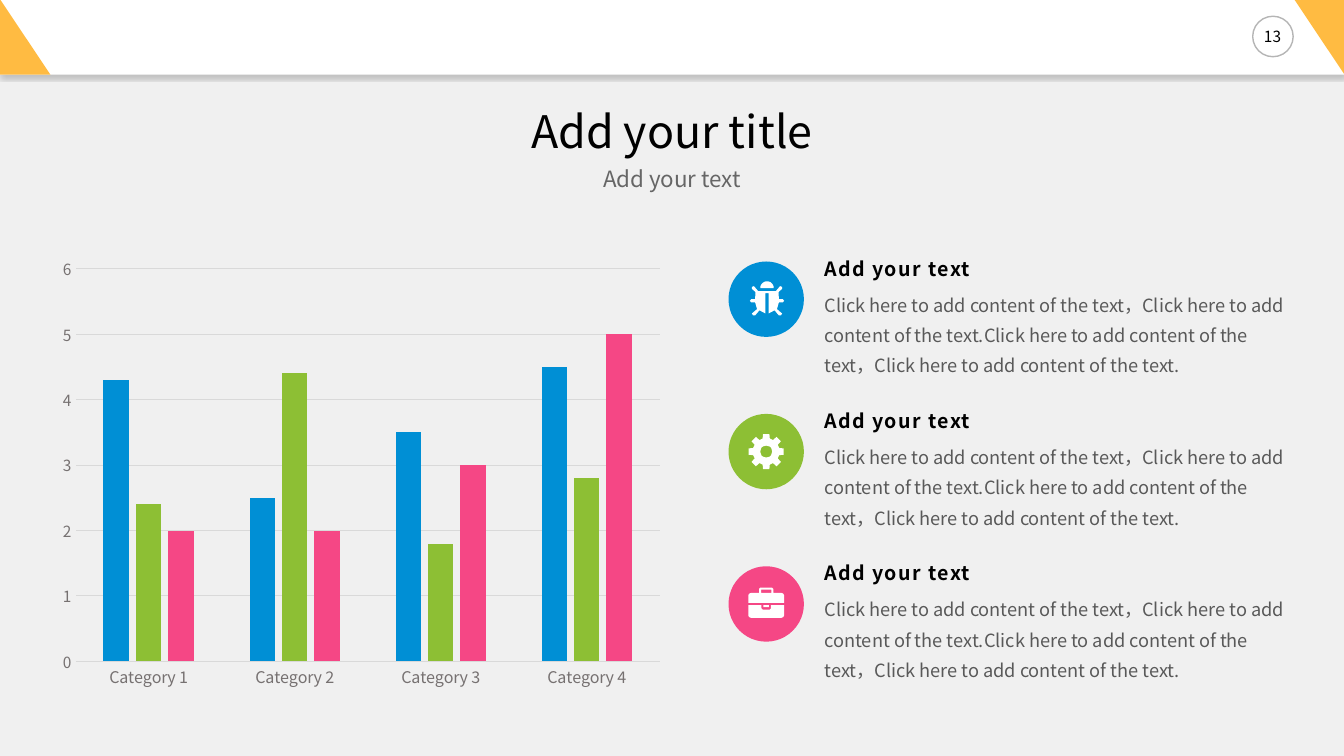
from math import cos, radians, sin

from lxml.etree import SubElement
from pptx import Presentation
from pptx.chart.data import CategoryChartData
from pptx.dml.color import RGBColor
from pptx.enum.chart import XL_CHART_TYPE, XL_TICK_MARK
from pptx.enum.shapes import MSO_SHAPE
from pptx.enum.text import MSO_ANCHOR, MSO_AUTO_SIZE, PP_ALIGN
from pptx.oxml.ns import qn
from pptx.util import Cm, Pt

FONT = "Noto Sans CJK JP"
WHITE = RGBColor(0xFF, 0xFF, 0xFF)
BLACK = RGBColor(0x00, 0x00, 0x00)
BACKGROUND = RGBColor(0xF0, 0xF0, 0xF0)
ORANGE = RGBColor(0xFF, 0xBB, 0x42)
BLUE = RGBColor(0x00, 0x8F, 0xD5)
GREEN = RGBColor(0x8D, 0xBF, 0x34)
PINK = RGBColor(0xF5, 0x47, 0x85)
RING = RGBColor(0x0D, 0x0D, 0x0D)
SUBTITLE_GREY = RGBColor(0x66, 0x66, 0x66)
BODY_GREY = RGBColor(0x59, 0x59, 0x59)
AXIS_GREY = RGBColor(0x76, 0x71, 0x71)
GRID_GREY = RGBColor(0xD9, 0xD9, 0xD9)

prs = Presentation()
prs.slide_width, prs.slide_height = Cm(33.87), Cm(19.05)
slide = prs.slides.add_slide(prs.slide_layouts[6])
slide.background.fill.solid()
slide.background.fill.fore_color.rgb = BACKGROUND


def add_filled(preset, left, top, width, height, color):
    shape = slide.shapes.add_shape(preset, Cm(left), Cm(top), Cm(width), Cm(height))
    shape.shadow.inherit = False
    shape.fill.solid()
    shape.fill.fore_color.rgb = color
    shape.line.fill.background()
    return shape


def add_text(text, left, top, width, height, size, color, line_spacing=0.9,
             align=PP_ALIGN.LEFT, before=0):
    """Add a one-run text box without margins and return its frame and run."""
    frame = slide.shapes.add_textbox(Cm(left), Cm(top), Cm(width), Cm(height)).text_frame
    frame.word_wrap = True
    frame.auto_size = MSO_AUTO_SIZE.TEXT_TO_FIT_SHAPE
    frame.margin_left = frame.margin_right = frame.margin_top = frame.margin_bottom = 0
    paragraph = frame.paragraphs[0]
    paragraph.alignment = align
    paragraph.line_spacing = line_spacing
    paragraph.space_before = Pt(before)
    run = paragraph.add_run()
    run.text = text
    run.font.size = Pt(size)
    run.font.name = FONT
    run.font.color.rgb = color
    SubElement(run.font._element, qn("a:ea"), typeface=FONT)
    return frame, run


# Header band with its shadow, corners and page number
band = add_filled(MSO_SHAPE.RECTANGLE, -0.02, -0.02, 33.89, 1.9, WHITE)
effects = band._element.spPr.find(qn("a:effectLst"))
band_shadow = SubElement(effects, qn("a:outerShdw"), blurRad=str(Pt(3)), dist=str(Pt(2)),
                         dir="5400000", algn="t", rotWithShape="0")
shadow_color = SubElement(band_shadow, qn("a:srgbClr"), val=str(BLACK))
SubElement(shadow_color, qn("a:alpha"), val="20000")

page_ring = add_filled(MSO_SHAPE.OVAL, 31.57, 0.41, 1.02, 1.02, WHITE)
page_ring.line.color.rgb = RING
page_ring.line.width = Pt(1)
ring_color = page_ring.line._ln.find(qn("a:solidFill")).find(qn("a:srgbClr"))
SubElement(ring_color, qn("a:alpha"), val="30000")

add_filled(MSO_SHAPE.RIGHT_TRIANGLE, 0, -0.02, 1.27, 1.9, ORANGE)
right_corner = add_filled(MSO_SHAPE.RIGHT_TRIANGLE, 32.6, -0.04, 1.27, 1.9, ORANGE)
right_corner.rotation = 180
page_frame, _ = add_text("13", 31.57, 0.41, 1, 1.02, 11, BLACK, 1, PP_ALIGN.CENTER)
page_frame.vertical_anchor = MSO_ANCHOR.MIDDLE

# Title and subtitle
add_text("Add your title", 1.27, 2.77, 31.33, 1.37, 32, BLACK, align=PP_ALIGN.CENTER)
add_text("Add your text", 1.27, 4.24, 31.33, 0.69, 16, SUBTITLE_GREY, align=PP_ALIGN.CENTER)

# Column chart
chart_data = CategoryChartData()
chart_data.categories = [f"Category {number}" for number in range(1, 5)]
chart_data.add_series("Series 1", (4.3, 2.5, 3.5, 4.5))
chart_data.add_series("Series 2", (2.4, 4.4, 1.8, 2.8))
chart_data.add_series("Series 3", (2, 2, 3, 5))
chart = slide.shapes.add_chart(XL_CHART_TYPE.COLUMN_CLUSTERED, Cm(1.27), Cm(6.27),
                               Cm(15.67), Cm(11.28), chart_data).chart
chart.has_legend = False
chart.has_title = False
chart.font.name = FONT
chart.font.color.rgb = AXIS_GREY
columns = chart.plots[0]
columns.gap_width = 219
columns.overlap = -27
columns.vary_by_categories = False
for series, color in zip(columns.series, (BLUE, GREEN, PINK)):
    series.format.fill.solid()
    series.format.fill.fore_color.rgb = color

category_axis, value_axis = chart.category_axis, chart.value_axis
for axis, size in ((category_axis, 11.5), (value_axis, 11)):
    axis.major_tick_mark = axis.minor_tick_mark = XL_TICK_MARK.NONE
    axis.tick_labels.font.size = Pt(size)
    axis.tick_labels.font.name = FONT
    axis.tick_labels.font.color.rgb = AXIS_GREY
value_axis.minimum_scale, value_axis.maximum_scale, value_axis.major_unit = 0, 6, 1
value_axis.format.line.fill.background()
for line in (category_axis.format.line, value_axis.major_gridlines.format.line):
    line.color.rgb = GRID_GREY
    line.width = Pt(0.75)

# Icon outlines, in hundredths of a centimetre from the centre of the disc
bug_right = [(4, -15), (4, 36), (19, 28), (30, 41), (35, 41), (38, 36), (25, 25),
             (30, 8), (40, 8), (43, 4), (40, 0), (30, 0), (29, -18), (38, -26),
             (38, -31), (33, -33), (22, -20)]
bug_body = bug_right + [(-x, y) for x, y in reversed(bug_right)]
bug_head = [(17 * cos(radians(a)), -28 - 17 * sin(radians(a))) for a in range(0, 181, 10)]
bug = [[(x + 2, y) for x, y in outline] for outline in (bug_body, bug_head)]

gear_teeth = [(radius * cos(radians(tooth + turn)), radius * sin(radians(tooth + turn)))
              for tooth in range(0, 360, 45)
              for turn, radius in ((-15, 34), (-10, 45), (10, 45), (15, 34))]
gear_hole = [(15 * cos(radians(a)), 15 * sin(radians(a))) for a in range(0, 360, 15)]

case_lid = [(-45, -3), (-45, -22), (-43, -26), (-38, -28), (-18, -28), (-18, -38),
            (-15, -41), (15, -41), (18, -38), (18, -28), (38, -28), (43, -26),
            (45, -22), (45, -3)]
case_handle = [(-13, -28), (-13, -36), (13, -36), (13, -28)]
case_base = [(-45, 3), (-12, 3), (-12, 11), (-9, 14), (9, 14), (12, 11), (12, 3),
             (45, 3), (45, 29), (43, 33), (38, 35), (-38, 35), (-43, 33), (-45, 29)]
case_clasp = [(-7, 3), (7, 3), (7, 8), (-7, 8)]

# Three points, each with a disc, an icon, a heading and a body
sentence = "Click here to add content of the text，Click here to add content of the text."
points = ((BLUE, bug), (GREEN, [gear_teeth, gear_hole]),
          (PINK, [case_lid, case_handle, case_base, case_clasp]))
for index, (color, outlines) in enumerate(points):
    row_top = 6.53 + 3.84 * index
    add_filled(MSO_SHAPE.OVAL, 18.36, row_top + 0.06, 1.9, 1.9, color)
    builder = slide.shapes.build_freeform(*outlines[0][0], scale=Cm(0.01))
    builder.add_line_segments(outlines[0][1:])
    for outline in outlines[1:]:
        builder.move_to(*outline[0])
        builder.add_line_segments(outline[1:])
    icon = builder.convert_to_shape(Cm(19.31), Cm(row_top + 1.01))
    icon.shadow.inherit = False
    icon.fill.solid()
    icon.fill.fore_color.rgb = WHITE
    icon.line.fill.background()

    _, heading = add_text("Add your text", 20.78, row_top, 11.84, 0.89, 14, BLACK, before=10)
    heading.font.bold = True
    heading.font._element.set("spc", "100")
    add_text(sentence * 2, 20.78, row_top + 0.66, 11.84, 2.31, 13, BODY_GREY, 1.4, before=10)

prs.save("out.pptx")
